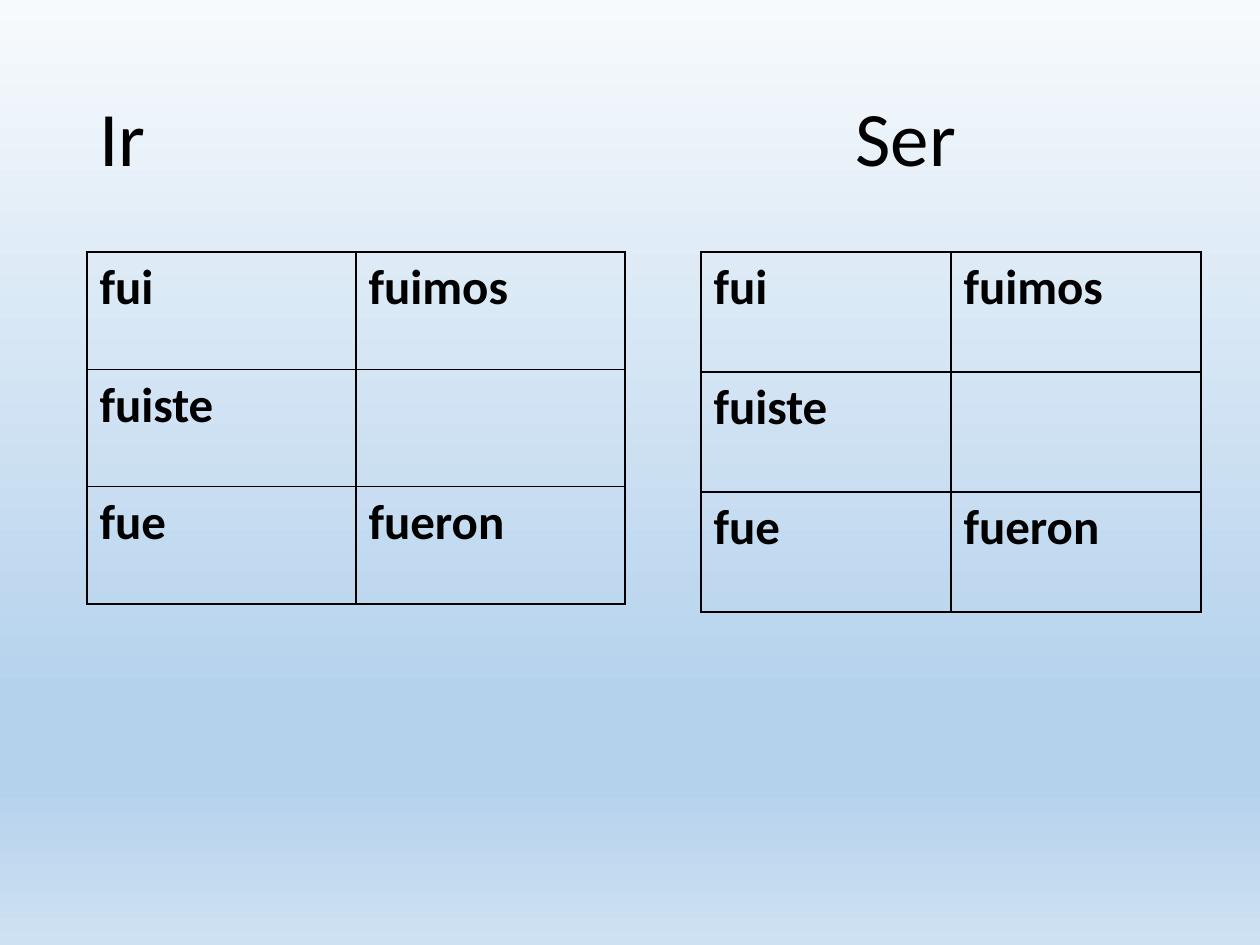
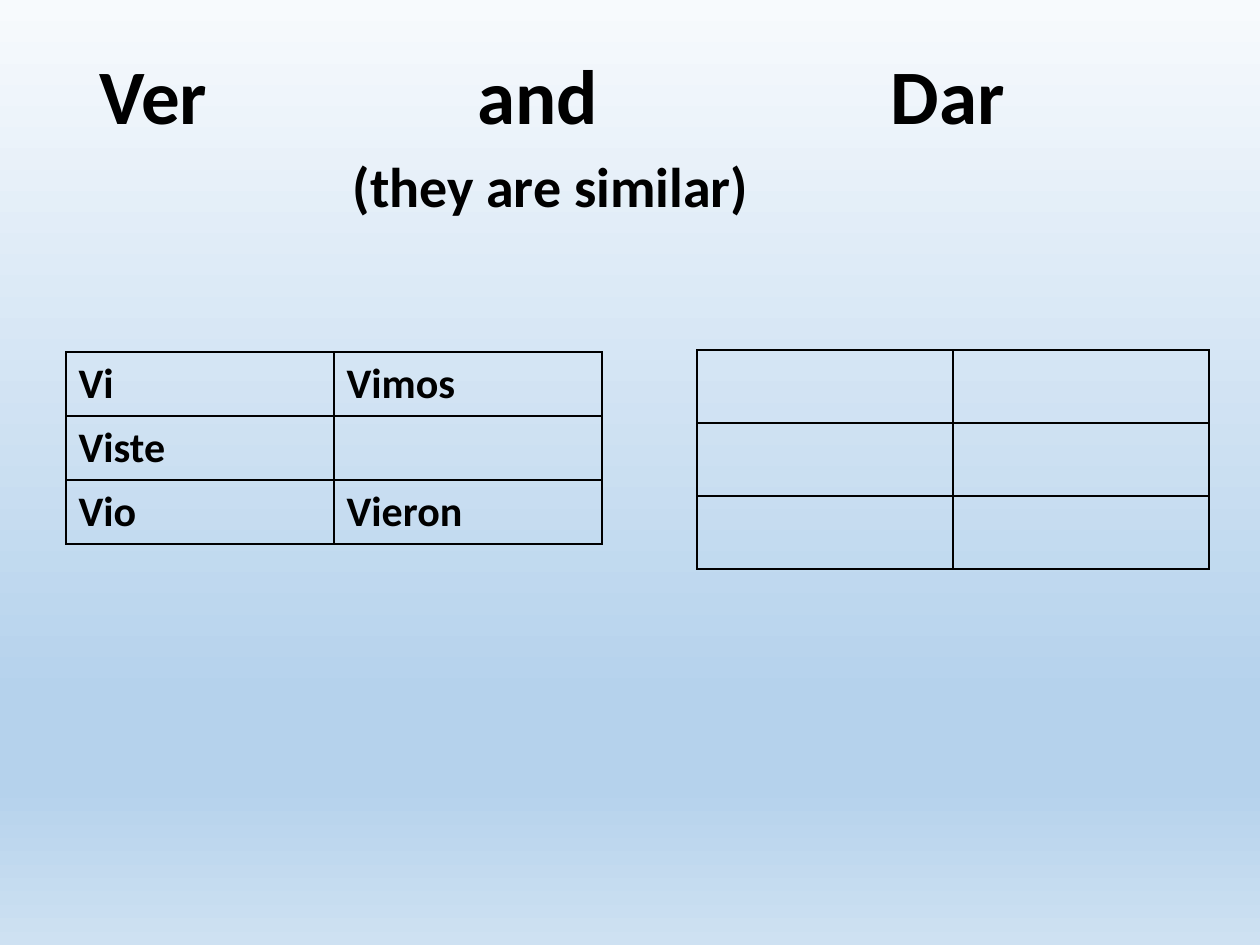
from pptx import Presentation
from pptx.dml.color import RGBColor as RGB
from pptx.enum.text import MSO_ANCHOR as Anchor, MSO_AUTO_SIZE as Fit, PP_ALIGN as Align
from pptx.oxml.ns import qn
from pptx.util import Emu, Pt
from lxml.etree import SubElement as Sub

# Content: title lines as (text, size) runs with their tab stops, then tables
IR_SER = [("fui", "fuimos"), ("fuiste", ""), ("fue", "fueron")]
VER = [("Vi", "Vimos"), ("Viste", ""), ("Vio", "Vieron")]
DAR = [("", "")] * 3

SLIDES = [
    {
        "bold": False,
        "title": [([("Ir\tSer", 44)], [756])],
        "tables": [
            {"rows": IR_SER, "box": (87, 252, 538, 352), "size": 28},
            {"rows": IR_SER, "box": (701, 252, 500, 360), "size": 28},
        ],
    },
    {
        "bold": True,
        "title": [
            ([("Ver\tand\tDar", 44)], [378, 791]),
            ([("\t", 44), ("(they are similar)", 32)], [253]),
        ],
        "tables": [
            {"rows": VER, "box": (66, 352, 536, 192), "size": 24},
            {"rows": DAR, "box": (697, 350, 512, 219), "size": 24},
        ],
    },
]

# Shared look
FONT = "Calibri"
BLACK = RGB(0, 0, 0)
SKY = [
    (0, RGB(0xF7, 0xFA, 0xFD)),
    (74, RGB(0xB5, 0xD2, 0xEC)),
    (83, RGB(0xB5, 0xD2, 0xEC)),
    (100, RGB(0xCE, 0xE1, 0xF2)),
]
PAGE = (1260, 945)
TITLE_BOX = (87, 50, 1086, 183)


def px(n):
    return Emu(round(n * 914400 / 126))


def add_text(para, text, size, bold=False, color=BLACK):
    run = para.add_run()
    run.text = text
    font = run.font
    font.name, font.size, font.bold = FONT, Pt(size), bold
    font.color.rgb = color


def add_color(parent, color):
    Sub(Sub(parent, qn("a:solidFill")), qn("a:srgbClr"), val=str(color))


def paint_sky(master):
    fill = master.background.fill
    fill.gradient()
    fill.gradient_angle = 270
    stops = next(master.element.iter(qn("a:gsLst")))
    for old in list(stops):
        stops.remove(old)
    for place, color in SKY:
        stop = Sub(stops, qn("a:gs"), pos=str(place * 1000))
        Sub(stop, qn("a:srgbClr"), val=str(color))


def set_title(shape, lines, bold):
    shape.left, shape.top, shape.width, shape.height = map(px, TITLE_BOX)
    frame = shape.text_frame
    frame.auto_size = Fit.NONE
    frame.vertical_anchor = Anchor.MIDDLE
    for i, (runs, tabs) in enumerate(lines):
        para = frame.add_paragraph() if i else frame.paragraphs[0]
        para.alignment, para.line_spacing = Align.LEFT, 0.9
        stops = Sub(para._p.get_or_add_pPr(), qn("a:tabLst"))
        for tab in tabs:
            Sub(stops, qn("a:tab"), pos=str(px(tab)), algn="l")
        for text, size in runs:
            add_text(para, text, size, bold=bold)


def add_grid(slide, rows, box, size):
    grid = slide.shapes.add_table(len(rows), len(rows[0]), *map(px, box)).table
    grid.first_row = grid.horz_banding = False
    for r, row in enumerate(rows):
        for c, word in enumerate(row):
            cell = grid.cell(r, c)
            props = cell._tc.get_or_add_tcPr()
            for side in "LRTB":
                add_color(Sub(props, qn("a:ln" + side), w=str(Pt(1))), BLACK)
            cell.fill.background()
            if word:
                add_text(cell.text_frame.paragraphs[0], word, size, bold=True)


def main():
    prs = Presentation()
    prs.slide_width, prs.slide_height = map(px, PAGE)
    paint_sky(prs.slide_master)
    for data in SLIDES:
        slide = prs.slides.add_slide(prs.slide_layouts[5])
        set_title(slide.shapes.title, data["title"], data["bold"])
        for table in data["tables"]:
            add_grid(slide, **table)
    prs.save("out.pptx")


if __name__ == "__main__":
    main()
